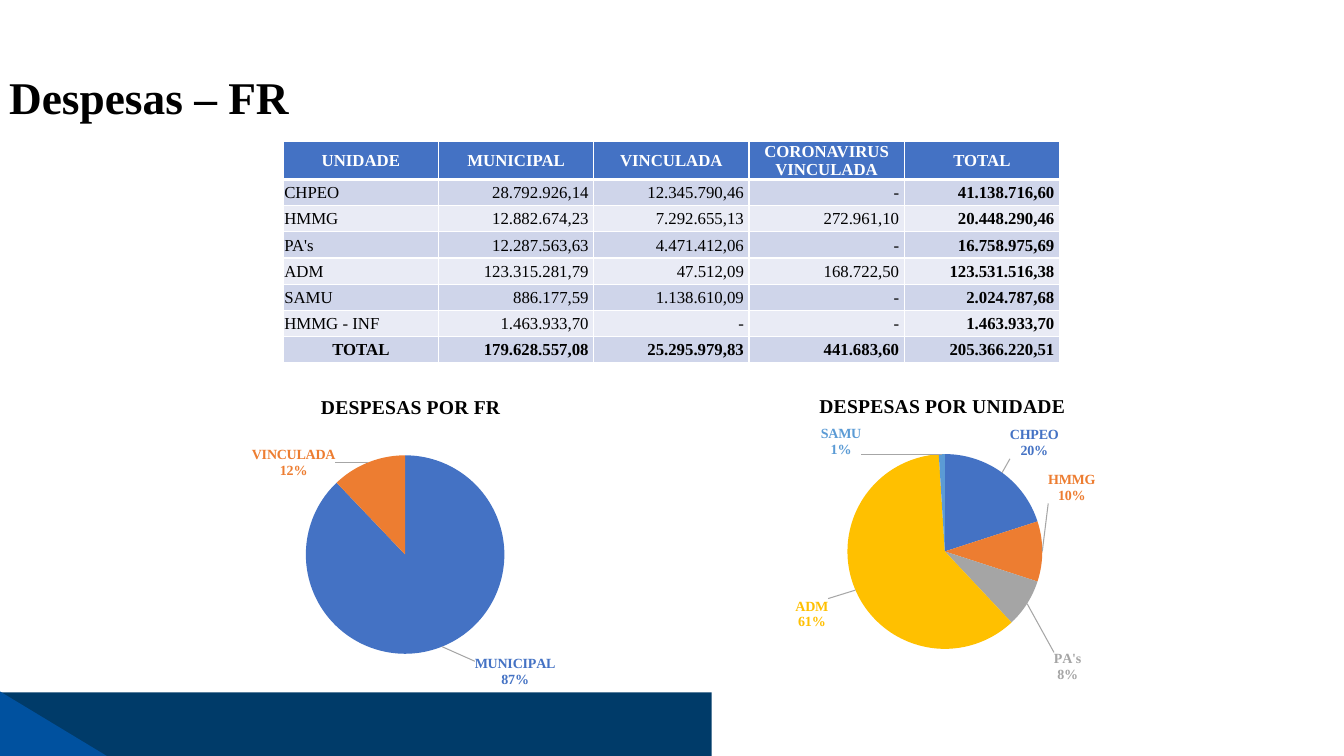
from lxml import etree
from pptx import Presentation
from pptx.chart.data import CategoryChartData
from pptx.dml.color import RGBColor
from pptx.enum.chart import XL_CHART_TYPE as CT
from pptx.enum.shapes import MSO_SHAPE as SHAPE
from pptx.enum.text import MSO_ANCHOR as ANCHOR, PP_ALIGN as ALIGN
from pptx.oxml.ns import nsdecls, qn
from pptx.oxml import parse_xml
from pptx.util import Inches, Pt

FONT = "Times New Roman"
COLORS = {
    "black": "000000", "white": "FFFFFF", "navy": "003B69", "royal": "00519F",
    "header": "4472C4", "band": "CFD5EA", "light": "E9EBF5", "leader": "A6A6A6",
}
SLICES = ["4472C4", "ED7D31", "A5A5A5", "FFC000", "5B9BD5"]
EXPENSES = [
    ["UNIDADE", "MUNICIPAL", "VINCULADA", "CORONAVIRUS VINCULADA", "TOTAL"],
    ["CHPEO", "28.792.926,14", "12.345.790,46", "-", "41.138.716,60"],
    ["HMMG", "12.882.674,23", "7.292.655,13", "272.961,10", "20.448.290,46"],
    ["PA's", "12.287.563,63", "4.471.412,06", "-", "16.758.975,69"],
    ["ADM", "123.315.281,79", "47.512,09", "168.722,50", "123.531.516,38"],
    ["SAMU", "886.177,59", "1.138.610,09", "-", "2.024.787,68"],
    ["HMMG - INF", "1.463.933,70", "-", "-", "1.463.933,70"],
    ["TOTAL", "179.628.557,08", "25.295.979,83", "441.683,60", "205.366.220,51"],
]
BY_SOURCE = [
    ("MUNICIPAL", 87, (0.07, 0.03)),
    ("VINCULADA", 12, (-0.07, 0.07)),
    ("CORONAVÍRUS VINCULADA", 0, None),
]
BY_UNIT = [
    ("CHPEO", 20, (0.01, -0.03)),
    ("HMMG", 10, (0, -0.21)),
    ("PA's", 8, (0.05, 0.15)),
    ("ADM", 61, (-0.05, 0.02)),
    ("SAMU", 1, (-0.23, 0.03)),
]


def rgb(name):
    return RGBColor.from_string(COLORS[name])


def style(font, size, color, bold):
    font.name, font.size, font.bold = FONT, Pt(size), bold
    font.color.rgb = rgb(color)


def add_band(s, kind, box, color):
    sp = s.shapes.add_shape(kind, *map(Inches, box))
    sp.shadow.inherit = False
    sp.fill.solid()
    sp.fill.fore_color.rgb = rgb(color)
    sp.line.fill.background()


def add_footer(s, x, y, w, h):
    add_band(s, SHAPE.RECTANGLE, (x, y + 0.01, w, h), "navy")
    add_band(s, SHAPE.RIGHT_TRIANGLE, (x, y, 1.06, h), "royal")


def add_title(s, x, y, w, h):
    sp = s.shapes.title
    sp.left, sp.top, sp.width, sp.height = map(Inches, (x, y, w, h))
    tf = sp.text_frame
    tf.text = "Despesas – FR"
    tf.vertical_anchor = ANCHOR.TOP
    tf.margin_left = Inches(0.09)
    p = tf.paragraphs[0]
    p.alignment, p.line_spacing = ALIGN.LEFT, 0.9
    style(p.runs[0].font, 32.4, "black", True)


def set_borders(cell, header):
    props = cell._tc.get_or_add_tcPr()
    for i, side in enumerate(("lnL", "lnR", "lnT", "lnB")):
        width = Pt(3) if header and side == "lnB" else Pt(1)
        props.insert(i, parse_xml(
            f'<a:{side} {nsdecls("a")} w="{width}"><a:solidFill>'
            f'<a:srgbClr val="{COLORS["white"]}"/></a:solidFill></a:{side}>'))


def add_expenses(s, x, y, w, h):
    n_rows, n_cols = len(EXPENSES), len(EXPENSES[0])
    table = s.shapes.add_table(n_rows, n_cols, *map(Inches, (x, y, w, h))).table
    header_h = 0.37
    for col in table.columns:
        col.width = Inches(w / n_cols)
    for r, values in enumerate(EXPENSES):
        header, total = r == 0, r == n_rows - 1
        table.rows[r].height = Inches(header_h if header else (h - header_h) / (n_rows - 1))
        fill = "header" if header else "band" if r % 2 else "light"
        for c, value in enumerate(values):
            cell = table.cell(r, c)
            cell.text = value
            cell.vertical_anchor = ANCHOR.MIDDLE
            cell.margin_left = cell.margin_top = Inches(0.01)
            cell.margin_bottom = 0
            number = c > 0 and not header
            cell.margin_right = Inches(0.05 if number else 0.01)
            cell.fill.solid()
            cell.fill.fore_color.rgb = rgb(fill)
            set_borders(cell, header)
            p = cell.text_frame.paragraphs[0]
            p.alignment = ALIGN.RIGHT if number else ALIGN.CENTER if header or total else ALIGN.LEFT
            style(p.runs[0].font, 12, "white" if header else "black",
                  header or total or c == n_cols - 1)


def layout(x, y, size="", mode=""):
    return (f'<c:layout {nsdecls("c")}><c:manualLayout>{mode}'
            f'<c:x val="{x}"/><c:y val="{y}"/>{size}</c:manualLayout></c:layout>')


def edge_layout(x, y, size="", target=""):
    mode = target + '<c:xMode val="edge"/><c:yMode val="edge"/>'
    return parse_xml(layout(x, y, size, mode))


def label_format(color, as_share):
    number = "0%" if as_share else "0&quot;%&quot;"
    return (f'<c:numFmt formatCode="{number}" sourceLinked="0"/>'
            f'<c:spPr><a:noFill/></c:spPr><c:txPr><a:bodyPr/><a:p><a:pPr>'
            f'<a:defRPr sz="1000" b="1"><a:solidFill><a:srgbClr val="{color}"/></a:solidFill>'
            f'<a:latin typeface="{FONT}"/></a:defRPr></a:pPr><a:endParaRPr lang="pt-BR"/></a:p></c:txPr>'
            f'<c:dLblPos val="outEnd"/><c:showLegendKey val="0"/><c:showVal val="{int(not as_share)}"/>'
            f'<c:showCatName val="1"/><c:showSerName val="0"/><c:showPercent val="{int(as_share)}"/>'
            '<c:showBubbleSize val="0"/><c:separator>\n</c:separator>')


def add_labels(series, slices):
    as_share = sum(value for _, value, _ in slices) == 100
    labels = ""
    for i, (_, _, offset) in enumerate(slices):
        body = layout(*offset) + label_format(SLICES[i], as_share) if offset else '<c:delete val="1"/>'
        labels += f'<c:dLbl><c:idx val="{i}"/>{body}</c:dLbl>'
    series._element.find(qn("c:cat")).addprevious(parse_xml(
        f'<c:dLbls {nsdecls("c", "a")}>{labels}{label_format(SLICES[0], as_share)}'
        '<c:showLeaderLines val="1"/><c:leaderLines><c:spPr><a:ln w="9525"><a:solidFill>'
        f'<a:srgbClr val="{COLORS["leader"]}"/></a:solidFill></a:ln></c:spPr></c:leaderLines></c:dLbls>'))


def replace_layout(parent, index, new):
    for old in parent.findall(qn("c:layout")):
        parent.remove(old)
    parent.insert(index, new)


def add_pie(s, box, title, title_at, plot, slices):
    data = CategoryChartData()
    data.categories = [name for name, _, _ in slices]
    data.add_series("Despesas", [value for _, value, _ in slices])
    chart = s.shapes.add_chart(CT.PIE, *map(Inches, box), data).chart
    chart.font.name, chart.font.size = "Calibri", Pt(10)
    chart.font.color.rgb = rgb("black")
    chart.has_legend = False
    chart.has_title = True
    tf = chart.chart_title.text_frame
    tf.text = title
    style(tf.paragraphs[0].runs[0].font, 14, "black", True)
    replace_layout(chart.chart_title._element, 1, edge_layout(*title_at))
    x, y, w, h = plot
    replace_layout(chart._chartSpace.chart.plotArea, 0, edge_layout(
        x, y, f'<c:w val="{w}"/><c:h val="{h}"/>', '<c:layoutTarget val="inner"/>'))
    chart.plots[0].vary_by_categories = True
    series = chart.plots[0].series[0]
    for i in range(len(slices)):
        fill = series.points[i].format.fill
        fill.solid()
        fill.fore_color.rgb = RGBColor.from_string(SLICES[i])
    add_labels(series, slices)


def main():
    prs = Presentation()
    prs.slide_width, prs.slide_height = Inches(13.33), Inches(7.5)
    s = prs.slides.add_slide(prs.slide_layouts[5])
    add_footer(s, 0, 6.86, 7.06, 0.64)
    add_title(s, 0, 0.7, 11, 0.51)
    add_expenses(s, 2.81, 1.4, 7.7, 2.19)
    add_pie(s, (1.8, 3.79, 4.35, 3.03), "DESPESAS POR FR", (0.31, 0.03),
            (0.1, 0.24, 0.82, 0.65), BY_SOURCE)
    add_pie(s, (7.18, 3.75, 4.34, 3.02), "DESPESAS POR UNIDADE", (0.21, 0.04),
            (0.1, 0.25, 0.81, 0.64), BY_UNIT)
    prs.save("out.pptx")


if __name__ == "__main__":
    main()
